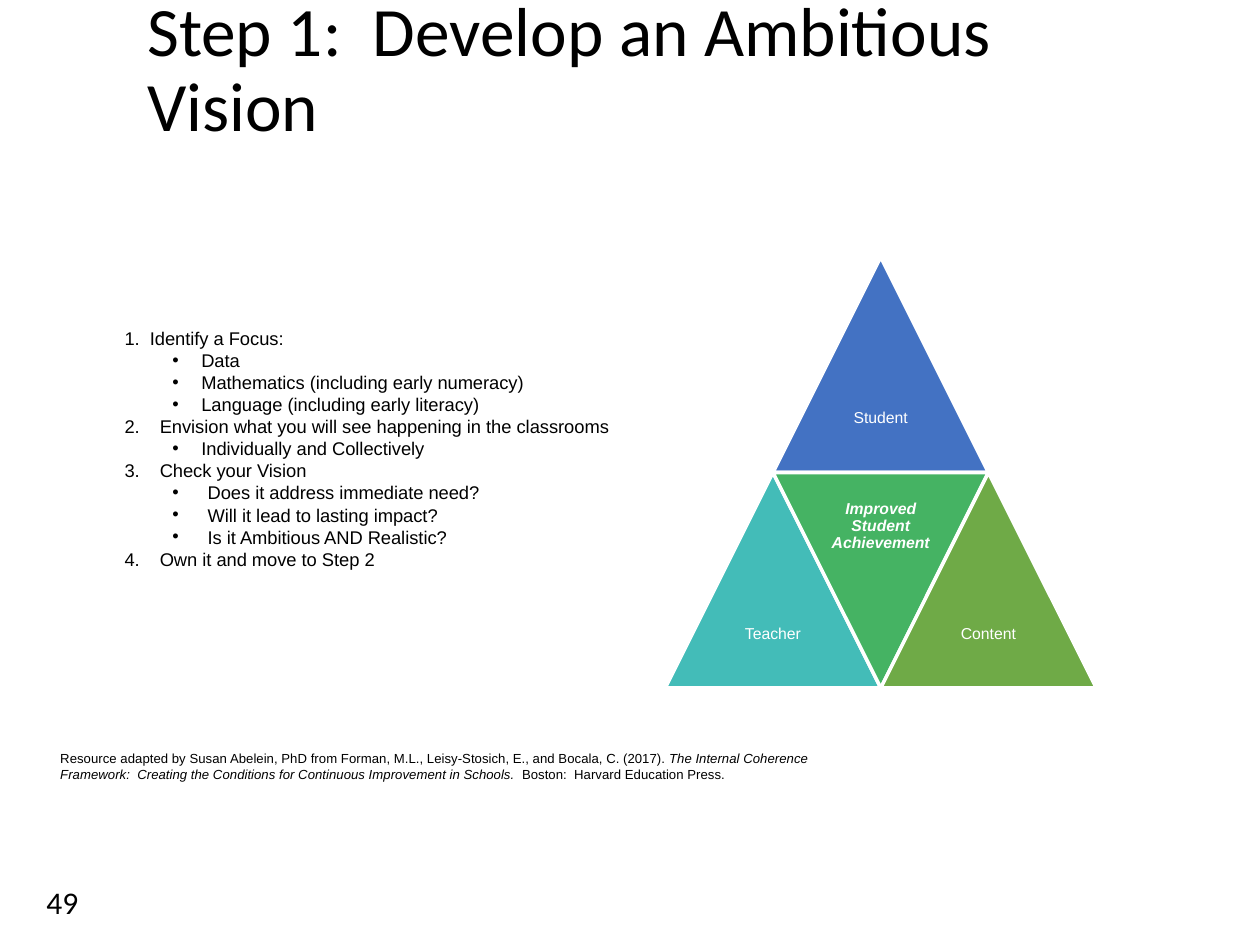
from lxml import etree
from pptx import Presentation
from pptx.dml.color import RGBColor
from pptx.enum.shapes import MSO_SHAPE as Shape
from pptx.enum.text import MSO_ANCHOR as Anchor, PP_ALIGN as Align
from pptx.oxml.ns import qn
from pptx.util import Inches, Pt

BLACK = RGBColor(0x00, 0x00, 0x00)
WHITE = RGBColor(0xFF, 0xFF, 0xFF)
BLUE = RGBColor(0x43, 0x72, 0xC3)
TEAL = RGBColor(0x43, 0xBC, 0xB8)
GREEN = RGBColor(0x45, 0xB3, 0x63)
OLIVE = RGBColor(0x6F, 0xAA, 0x47)

# Outline styles: level, left margin, hanging indent, marker
PLAIN = (0, 0, 0, None)
NUMBER = (0, 0.28, 0.28, "number")
BULLET = (1, 0.61, 0.23, "bullet")
WIDE_BULLET = (1, 0.66, 0.28, "bullet")

STEPS = [
    ("1.  Identify a Focus:", PLAIN),
    ("Data", BULLET),
    ("Mathematics (including early numeracy)", BULLET),
    ("Language (including early literacy)", BULLET),
    ("Envision what you will see happening in the classrooms", NUMBER),
    ("Individually and Collectively", BULLET),
    ("Check your Vision", NUMBER),
    ("Does it address immediate need?", WIDE_BULLET),
    ("Will it lead to lasting impact?", WIDE_BULLET),
    ("Is it Ambitious AND Realistic?", WIDE_BULLET),
    ("Own it and move to Step 2", NUMBER),
]

CITATION = [
    ("Resource adapted by Susan Abelein, PhD from Forman, M.L., "
     "Leisy-Stosich, E., and Bocala, C. (2017).", False),
    (" The Internal Coherence Framework:  Creating the Conditions for "
     "Continuous Improvement in Schools.  ", True),
    ("Boston:  Harvard Education Press.", False),
]


class SlideBuilder:
    def __init__(self, slide):
        self.slide = slide

    def style(self, paragraph, size, font="Arial", color=BLACK):
        paragraph.font.size = Pt(size)
        paragraph.font.name = font
        paragraph.font.color.rgb = color

    def frame(self, left, top, width, height):
        box = self.slide.shapes.add_textbox(
            Inches(left), Inches(top), Inches(width), Inches(height))
        box.text_frame.word_wrap = True
        return box.text_frame

    def text(self, area, text, size, font="Calibri"):
        frame = self.frame(*area)
        paragraph = frame.paragraphs[0]
        paragraph.text = text
        self.style(paragraph, size, font)
        return frame

    def outline(self, area, items, size):
        frame = self.frame(*area)
        for index, (text, layout) in enumerate(items):
            paragraph = frame.add_paragraph() if index else frame.paragraphs[0]
            paragraph.text = text
            self.mark(paragraph, *layout)
            self.style(paragraph, size)

    def mark(self, paragraph, level, margin, hanging, marker):
        if marker is None:
            return
        paragraph.level = level
        properties = paragraph._p.get_or_add_pPr()
        properties.set("marL", str(Inches(margin)))
        properties.set("indent", str(-Inches(hanging)))
        etree.SubElement(properties, qn("a:buFont"), typeface="Arial")
        if marker == "number":
            etree.SubElement(properties, qn("a:buAutoNum"),
                             type="arabicPeriod", startAt="2")
        else:
            etree.SubElement(properties, qn("a:buChar"), char="•")

    def citation(self, area, parts, size):
        paragraph = self.frame(*area).paragraphs[0]
        for text, italic in parts:
            run = paragraph.add_run()
            run.text = text
            run.font.italic = italic
        self.style(paragraph, size)

    def triangle(self, left, top, side, color, label, inverted=False):
        shape = self.slide.shapes.add_shape(
            Shape.ISOSCELES_TRIANGLE,
            Inches(left), Inches(top), Inches(side), Inches(side))
        shape.shadow.inherit = False
        shape.fill.solid()
        shape.fill.fore_color.rgb = color
        shape.line.color.rgb = WHITE
        shape.line.width = Pt(2)
        shape.rotation = 180 if inverted else 0

        # The label sits in the wide half of the triangle
        label_top = top if inverted else top + side / 2
        frame = self.frame(left + side / 4, label_top, side / 2, side / 2)
        # No side margins, so that the longest word fits on one line
        frame.margin_left = frame.margin_right = 0
        frame.margin_top = frame.margin_bottom = Inches(0.04)
        frame.vertical_anchor = Anchor.MIDDLE
        paragraph = frame.paragraphs[0]
        paragraph.text = label
        paragraph.alignment = Align.CENTER
        paragraph.line_spacing = 0.9
        self.style(paragraph, 9, color=WHITE)
        if inverted:
            paragraph.font.bold = paragraph.font.italic = True


def main():
    presentation = Presentation()
    presentation.slide_width = Inches(10)
    presentation.slide_height = Inches(7.5)
    slide = presentation.slides.add_slide(presentation.slide_layouts[6])
    builder = SlideBuilder(slide)

    # Slide number and title
    builder.text((0.27, 6.96, 2.25, 0.4), "49", 18)
    title = builder.text((1.07, 0.23, 7.78, 0.98),
                         "Step 1:  Develop an Ambitious Vision", 39.6)
    title.vertical_anchor = Anchor.BOTTOM
    title.paragraphs[0].line_spacing = 0.9

    # Pyramid of four triangles
    left, top, side = 5.28, 2.04, 1.71
    middle, base = left + side / 2, top + side
    builder.triangle(middle, top, side, BLUE, "Student")
    builder.triangle(left, base, side, TEAL, "Teacher")
    builder.triangle(middle, base, side, GREEN,
                     "Improved Student Achievement", inverted=True)
    builder.triangle(left + side, base, side, OLIVE, "Content")

    # Steps and source
    builder.outline((0.89, 2.55, 4.07, 2.57), STEPS, 10.5)
    builder.citation((0.38, 5.91, 6.27, 0.35), CITATION, 7.5)

    presentation.save("out.pptx")


if __name__ == "__main__":
    main()
